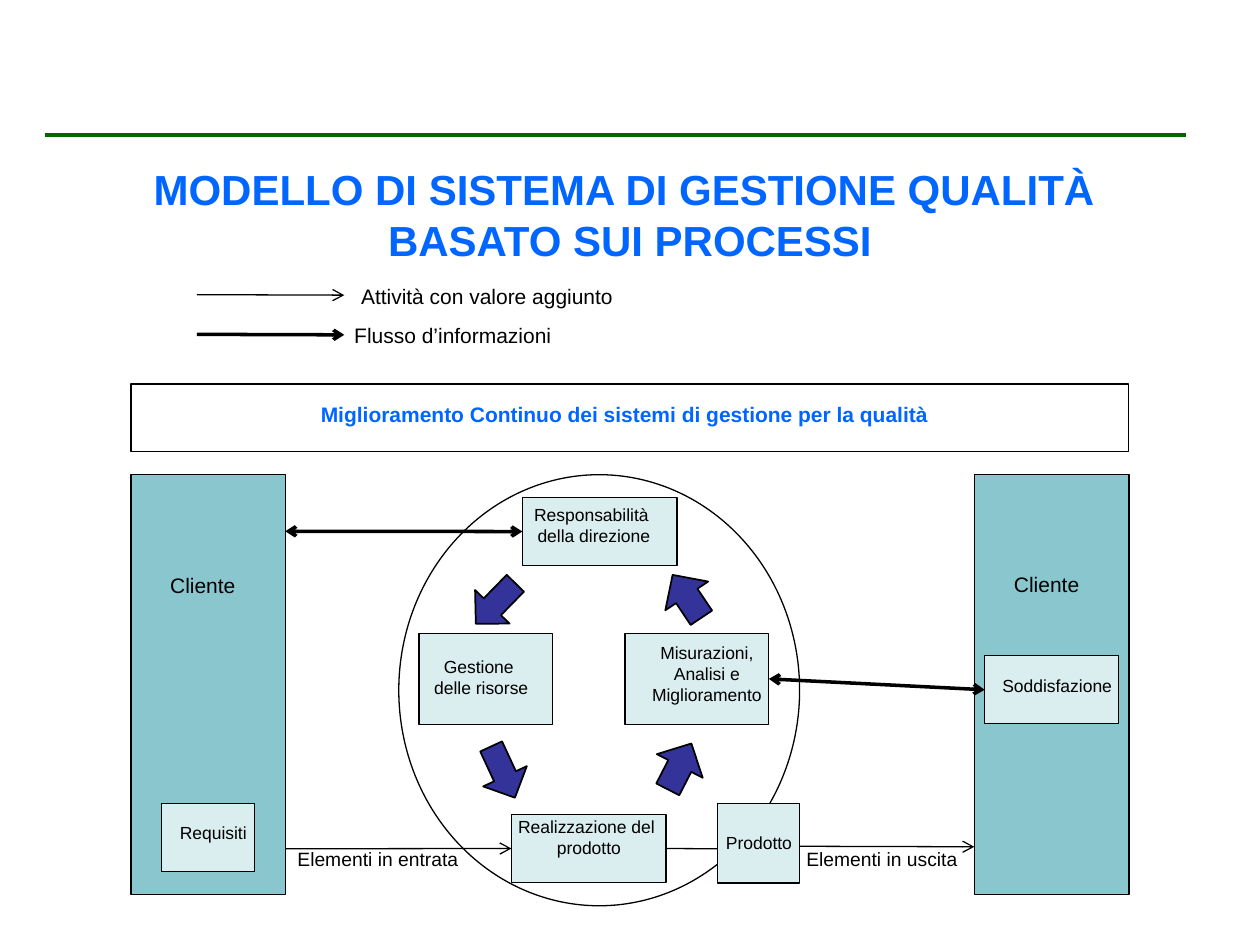
from lxml.etree import SubElement
from pptx import Presentation
from pptx.dml.color import RGBColor
from pptx.enum.shapes import MSO_CONNECTOR, MSO_SHAPE
from pptx.enum.text import PP_ALIGN
from pptx.oxml.ns import qn
from pptx.util import Cm, Pt

THEME = {
    "face": "Arial",
    "ink": "000000", "blue": "0066FF", "rule": "006600",
    "pale": "DAEDEF", "teal": "8AC6CD", "navy": "333399",
    "head": {"size": Pt(24), "bold": True},
    "strong": {"size": Pt(12), "bold": True},
    "label": {"size": Pt(12)},
    "flow": {"size": Pt(11)},
    "box": {"size": Pt(10)},
    "thin": 0.75, "edge": 1, "thick": 2,
}

# key, preset, left, top, width, height (cm), fill
BOXES = [
    ("product work", "RECTANGLE", 10.31, 16.42, 3.12, 1.37, "pale"),
    ("measures", "RECTANGLE", 12.6, 12.77, 2.9, 1.83, "pale"),
    ("cycle", "OVAL", 8.04, 9.57, 8.08, 8.69, None),
    ("client in", "RECTANGLE", 2.64, 9.57, 3.12, 8.46, "teal"),
    ("client out", "RECTANGLE", 19.64, 9.57, 3.12, 8.46, "teal"),
    ("needs", "RECTANGLE", 3.26, 16.2, 1.87, 1.37, "pale"),
    ("content", "RECTANGLE", 19.85, 13.22, 2.7, 1.37, "pale"),
    ("resources", "RECTANGLE", 8.45, 12.77, 2.69, 1.83, "pale"),
    ("lead", "RECTANGLE", 10.53, 10.03, 3.12, 1.37, "pale"),
    ("banner", "RECTANGLE", 2.64, 7.74, 20.11, 1.37, None),
    ("product", "RECTANGLE", 14.46, 16.2, 1.66, 1.6, "pale"),
]

# left, top, width, height (cm), turn in degrees
TURNS = [
    (13.33, 11.5, 1.04, 1.04, 236.1), (13.18, 14.93, 1.04, 1.04, 297.2),
    (9.42, 11.68, 1.14, 0.97, 134.3), (9.57, 15.08, 1.14, 0.97, 65.1),
]

# start, end, colour, weight, arrowheads; an end is (x, y) or (box key, side)
LINES = [
    ((0.9, 2.72), (23.9, 2.72), "rule", "thick", ()),
    ((3.97, 5.94), (6.94, 5.95), "ink", "thin", ("tail",)),
    ((3.97, 6.74), (6.94, 6.75), "ink", "thick", ("tail",)),
    (("lead", 1), (5.75, 10.71), "ink", "thick", ("head", "tail")),
    (("content", 1), ("measures", 3), "ink", "thick", ("head", "tail")),
    ((5.75, 17.11), ("product work", 1), "ink", "thin", ("tail",)),
    (("product work", 3), (14.46, 17.11), "ink", "thin", ()),
    ((16.12, 17.06), (19.64, 17.07), "ink", "thin", ("tail",)),
]

# left, top, width (cm), style, colour, lines
TEXTS = [
    (0.29, 3.18, 24.82, "head", "blue",
     ["MODELLO DI SISTEMA DI GESTIONE QUALITÀ ", "BASATO SUI PROCESSI"]),
    (5.35, 5.59, 8.94, "label", "ink", ["Attività con valore aggiunto"]),
    (6.35, 6.38, 5.56, "label", "ink", ["Flusso d’informazioni"]),
    (4.72, 7.98, 15.75, "strong", "blue",
     ["Miglioramento Continuo dei sistemi di gestione per la qualità"]),
    (1.18, 11.42, 5.82, "label", "ink", ["Cliente"]),
    (18.19, 11.4, 5.82, "label", "ink", ["Cliente"]),
    (9.06, 10.03, 5.82, "box", "ink", ["Responsabilità ", "della direzione"]),
    (6.79, 13.09, 5.82, "box", "ink", ["Gestione ", "delle risorse"]),
    (11.34, 12.82, 5.82, "box", "ink",
     ["Misurazioni,", "Analisi e", "Miglioramento"]),
    (8.86, 16.33, 6.02, "box", "ink", ["Realizzazione del ", "prodotto"]),
    (12.39, 16.65, 5.82, "box", "ink", ["Prodotto"]),
    (1.39, 16.45, 5.82, "box", "ink", ["Requisiti"]),
    (18.4, 13.49, 5.82, "box", "ink", ["Soddisfazione"]),
    (4.71, 16.96, 5.82, "flow", "ink", ["Elementi in entrata"]),
    (14.87, 16.96, 5.82, "flow", "ink", ["Elementi in uscita"]),
]


def tint(name):
    return RGBColor.from_string(THEME[name])


def stroke(line, color, weight):
    line.color.rgb = tint(color)
    line.width = Pt(THEME[weight])


def add_form(slide, kind, place, fill, weight):
    form = slide.shapes.add_shape(kind, *map(Cm, place))
    form.shadow.inherit = False
    if fill:
        form.fill.solid()
        form.fill.fore_color.rgb = tint(fill)
    else:
        form.fill.background()
    stroke(form.line, "ink", weight)
    return form


def add_line(slide, forms, start, end, color, weight, tips):
    """Draw a line, joining each end that names a box to that box's side."""
    spots = [(0, 0) if p[0] in forms else p for p in (start, end)]
    link = slide.shapes.add_connector(
        MSO_CONNECTOR.STRAIGHT, *(Cm(v) for spot in spots for v in spot))
    for point, join in ((start, link.begin_connect), (end, link.end_connect)):
        if point[0] in forms:
            join(forms[point[0]], point[1])
    stroke(link.line, color, weight)
    pen = link.line._get_or_add_ln()
    for tip in tips:
        SubElement(pen, qn(f"a:{tip}End"), type="arrow")
    SubElement(link._element.spPr, qn("a:effectLst"))


def add_text(slide, left, top, width, style, color, lines):
    look = {"name": THEME["face"], **THEME[style]}
    high = Cm(0.25) + int(look["size"] * 1.2 * len(lines))
    area = slide.shapes.add_textbox(Cm(left), Cm(top), Cm(width), high)
    frame = area.text_frame
    frame.word_wrap = True
    for i, line in enumerate(lines):
        para = frame.add_paragraph() if i else frame.paragraphs[0]
        para.alignment = PP_ALIGN.CENTER
        run = para.add_run()
        run.text = line
        run.font.color.rgb = tint(color)
        for key, value in look.items():
            setattr(run.font, key, value)


def main():
    deck = Presentation()
    deck.slide_width, deck.slide_height = Cm(25.4), Cm(19.05)
    slide = deck.slides.add_slide(deck.slide_layouts[6])
    forms = {}
    for key, kind, *place, fill in BOXES:
        forms[key] = add_form(slide, MSO_SHAPE[kind], place, fill, "thin")
    for *place, turn in TURNS:
        arrow = add_form(slide, MSO_SHAPE.RIGHT_ARROW, place, "navy", "edge")
        arrow.adjustments[1] = 0.49
        arrow.rotation = turn
    for line in LINES:
        add_line(slide, forms, *line)
    for text in TEXTS:
        add_text(slide, *text)
    deck.save("out.pptx")


if __name__ == "__main__":
    main()
